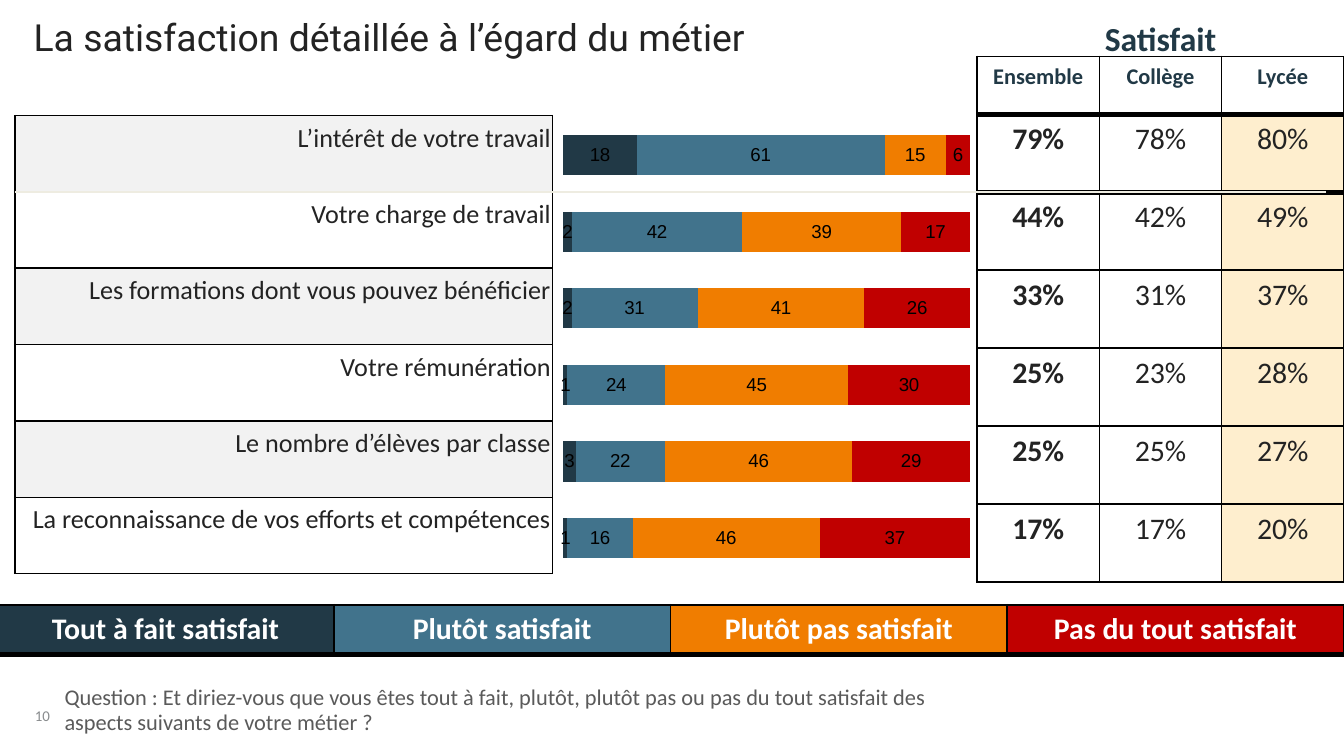
import lxml.etree
import pptx
import pptx.chart.data
import pptx.dml.color
import pptx.enum.chart
import pptx.enum.shapes
import pptx.enum.text
import pptx.oxml
import pptx.oxml.ns
import pptx.util

Inches = pptx.util.Inches
Pt = pptx.util.Pt
RGBColor = pptx.dml.color.RGBColor
ALIGN = pptx.enum.text.PP_ALIGN
ANCHOR = pptx.enum.text.MSO_ANCHOR
qn = pptx.oxml.ns.qn

NAVY = RGBColor(0x21, 0x39, 0x46)
BLUE = RGBColor(0x41, 0x73, 0x8C)
ORANGE = RGBColor(0xF0, 0x7D, 0x00)
RED = RGBColor(0xC0, 0x00, 0x00)
CREAM = RGBColor(0xFE, 0xEE, 0xCE)
PALE = RGBColor(0xF2, 0xF2, 0xF2)
BEIGE = RGBColor(0xEE, 0xEC, 0xE1)
INK = RGBColor(0x23, 0x23, 0x23)
GREY = RGBColor(0x5A, 0x5A, 0x5A)
SILVER = RGBColor(0x88, 0x8B, 0x8D)
WHITE = RGBColor(0xFF, 0xFF, 0xFF)
BLACK = RGBColor(0x00, 0x00, 0x00)

THIN, THICK = 0.96, 3

# Label, answer shares, satisfied shares (all, collège, lycée)
ROWS = [
    ("L’intérêt de votre travail", (18, 61, 15, 6), (79, 78, 80)),
    ("Votre charge de travail", (2, 42, 39, 17), (44, 42, 49)),
    ("Les formations dont vous pouvez bénéficier", (2, 31, 41, 26), (33, 31, 37)),
    ("Votre rémunération", (1, 24, 45, 30), (25, 23, 28)),
    ("Le nombre d’élèves par classe", (3, 22, 46, 29), (25, 25, 27)),
    ("La reconnaissance de vos efforts et compétences", (1, 16, 46, 37), (17, 17, 20)),
]
SCALE = [
    ("Tout à fait satisfait", NAVY),
    ("Plutôt satisfait", BLUE),
    ("Plutôt pas satisfait", ORANGE),
    ("Pas du tout satisfait", RED),
]

deck = pptx.Presentation()
deck.slide_width, deck.slide_height = Inches(10), Inches(10 * 9 / 16)
slide = deck.slides.add_slide(deck.slide_layouts[6])


def style(frame, text, size, color, bold=False, align=ALIGN.LEFT, font="Calibri"):
    """Write one paragraph into a text frame and return it."""
    frame.text = text
    para = frame.paragraphs[0]
    para.alignment = align
    para.font.name, para.font.size = font, Pt(size)
    para.font.bold, para.font.color.rgb = bold, color
    return para


def paint(cell, fill=None, top=THIN, base=THIN, side=None):
    """Set a cell's black borders, its fill and, if given, its side margins."""
    props = cell._tc.get_or_add_tcPr()
    for tag, width in (("L", THIN), ("R", THIN), ("T", top), ("B", base)):
        props.append(pptx.oxml.parse_xml(
            f'<a:ln{tag} {pptx.oxml.ns.nsdecls("a")} w="{Pt(width)}">'
            f'<a:solidFill><a:srgbClr val="{BLACK}"/></a:solidFill></a:ln{tag}>'))
    if fill is None:
        cell.fill.background()
    else:
        cell.fill.solid()
        cell.fill.fore_color.rgb = fill
    if side is not None:
        cell.margin_left = cell.margin_right = Inches(side)


# Title, column heading, question and page number
TEXTS = [
    ((0.26, 5.13, 0.34, 0.26), "10", 8, SILVER, False, ALIGN.LEFT, "Calibri", ANCHOR.BOTTOM, 0.85),
    ((0.25, 0.14, 9.46, 0.3), "La satisfaction détaillée à l’égard du métier",
     20, INK, False, ALIGN.LEFT, "Roboto", ANCHOR.TOP, 0.9),
    ((0.48, 5.11, 6.89, 0.35),
     "Question : Et diriez-vous que vous êtes tout à fait, plutôt, plutôt pas "
     "ou pas du tout satisfait des aspects suivants de votre métier ?",
     12, GREY, False, ALIGN.LEFT, "Calibri", ANCHOR.MIDDLE, 0.95),
    ((7.78, 0.13, 1.71, 0.3), "Satisfait", 18, NAVY, True, ALIGN.CENTER, "Calibri", ANCHOR.TOP, 1.0),
]
for place, text, size, color, bold, align, font, anchor, space in TEXTS:
    frame = slide.shapes.add_textbox(*map(Inches, place)).text_frame
    frame.word_wrap = True
    frame.vertical_anchor = anchor
    frame.margin_left = frame.margin_right = frame.margin_top = frame.margin_bottom = 0
    style(frame, text, size, color, bold, align, font).line_spacing = space

# Tables: answer scale, satisfied shares, topics
grids = []
for count, width, place in (
    (1, 4, (-0.02, 4.5, 10.02, 0.37)),
    (7, 3, (7.27, 0.42, 2.73, 3.89)),
    (6, 1, (0.11, 0.86, 4, 3.41)),
):
    grid = slide.shapes.add_table(count, width, *map(Inches, place)).table
    grid.first_row = grid.horz_banding = False
    grids.append(grid)
legend, shares, topics = grids

for col, (text, color) in enumerate(SCALE):
    cell = legend.cell(0, col)
    paint(cell, color, base=THICK)
    style(cell.text_frame, text, 16, WHITE, True, ALIGN.CENTER)

shares.rows[0].height = Inches(0.43)
for row in range(1, 7):
    shares.rows[row].height = Inches(0.58)
for col, text in enumerate(("Ensemble", "Collège", "Lycée")):
    cell = shares.cell(0, col)
    paint(cell, base=THICK)
    style(cell.text_frame, text, 12, NAVY, True, ALIGN.CENTER)

for row, (topic, _, rates) in enumerate(ROWS):
    cell = topics.cell(row, 0)
    paint(cell, PALE if row % 2 == 0 else None, side=0.01)
    style(cell.text_frame, topic, 14, INK, align=ALIGN.RIGHT)
    for col, rate in enumerate(rates):
        cell = shares.cell(row + 1, col)
        paint(cell, CREAM if col == 2 else None, side=0.01,
              top=THICK if row < 2 else THIN, base=THICK if row == 0 else THIN)
        style(cell.text_frame, f"{rate}%", 16, INK, col == 0, ALIGN.CENTER)

# Rule under the first topic
rule = slide.shapes.add_connector(
    pptx.enum.shapes.MSO_CONNECTOR.STRAIGHT,
    Inches(0.11), Inches(1.43), Inches(9.87), Inches(1.43))
rule.line.color.rgb, rule.line.width = BEIGE, Pt(1)
lxml.etree.SubElement(rule._element.spPr, qn("a:effectLst"))

# Stacked bars
data = pptx.chart.data.CategoryChartData()
data.categories = [str(num) for num in range(1, 7)]
for num in range(4):
    data.add_series(f"Series {num + 1}", [votes[num] for _, votes, _ in ROWS])
chart = slide.shapes.add_chart(
    pptx.enum.chart.XL_CHART_TYPE.BAR_STACKED,
    Inches(4.09), Inches(0.49), Inches(3.4), Inches(3.8), data).chart
chart.has_legend = chart.has_title = False
chart.font.name, chart.font.size, chart.font.color.rgb = "Arial", Pt(10), BLACK
chart.category_axis.reverse_order = True
chart.value_axis.minimum_scale, chart.value_axis.maximum_scale = 0, 100
chart.value_axis.has_major_gridlines = False
chart.category_axis.visible = chart.value_axis.visible = False

plot = chart.plots[0]
plot.gap_width, plot.overlap, plot.vary_by_categories = 90, 100, False
for series, (_, color) in zip(plot.series, SCALE):
    series.format.fill.solid()
    series.format.fill.fore_color.rgb = color
    series.data_labels.show_value = True
    series.data_labels.position = pptx.enum.chart.XL_LABEL_POSITION.CENTER

area = chart._chartSpace.chart.plotArea
for old in area.findall(qn("c:layout")):
    area.remove(old)
layout = lxml.etree.Element(qn("c:layout"))
area.insert(0, layout)
manual = lxml.etree.SubElement(layout, qn("c:manualLayout"))
for tag, val in (("layoutTarget", "inner"), ("xMode", "edge"), ("yMode", "edge"),
                 ("x", "0.03"), ("y", "0.1"), ("w", "0.89"), ("h", "0.9")):
    lxml.etree.SubElement(manual, qn(f"c:{tag}")).set("val", val)

deck.save("out.pptx")
